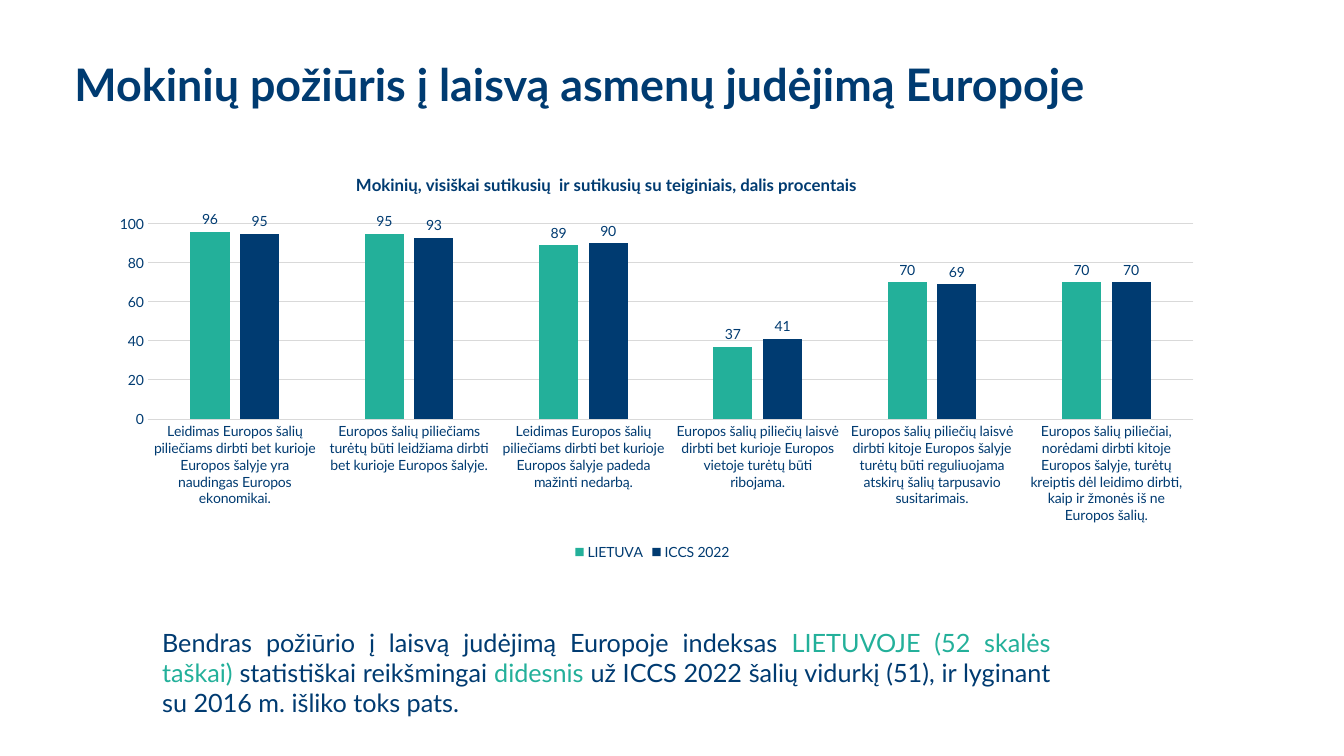
from lxml import etree
from pptx import Presentation
from pptx import util as u
from pptx.chart.data import CategoryChartData
from pptx.dml.color import RGBColor
from pptx.enum import chart as ch, text
from pptx.oxml.ns import qn

COLOURS = {"navy": "003B71", "teal": "23B09A", "grid": "D9D9D9"}


def style(font, size, colour="navy", bold=False):
    font.name = "Lato"
    font.size = u.Pt(size)
    font.bold = bold
    font.color.rgb = RGBColor.from_string(COLOURS[colour])


def place(part, index, **fractions):
    layout = part.find(qn("c:layout"))
    if layout is None:
        layout = etree.Element(qn("c:layout"))
        part.insert(index, layout)
    manual = etree.SubElement(layout, qn("c:manualLayout"))
    for tag, value in fractions.items():
        etree.SubElement(manual, qn(f"c:{tag}")).set("val", str(value))


prs = Presentation()
prs.slide_width = u.Inches(13.33)
prs.slide_height = u.Inches(7.5)
slide = prs.slides.add_slide(prs.slide_layouts[6])

heading = slide.shapes.add_textbox(
    u.Inches(0.64), u.Inches(0.57), u.Inches(12.04), u.Inches(0.58)).text_frame
heading.word_wrap = True
heading.vertical_anchor = text.MSO_ANCHOR.MIDDLE
heading.paragraphs[0].line_spacing = 0.9
heading_run = heading.paragraphs[0].add_run()
heading_run.text = "Mokinių požiūris į laisvą asmenų judėjimą Europoje"
style(heading_run.font, 32, bold=True)

summary = slide.shapes.add_textbox(
    u.Inches(1.51), u.Inches(6.17), u.Inches(9.01), u.Inches(1.01)).text_frame
summary.word_wrap = True
summary.paragraphs[0].alignment = text.PP_ALIGN.JUSTIFY
for words, colour in [
    ("Bendras požiūrio į laisvą judėjimą Europoje indeksas ", "navy"),
    ("LIETUVOJE (52 skalės taškai) ", "teal"),
    ("statistiškai reikšmingai ", "navy"),
    ("didesnis ", "teal"),
    ("už ICCS 2022 šalių vidurkį (51), ir lyginant su 2016 m. išliko toks pats.", "navy"),
]:
    run = summary.paragraphs[0].add_run()
    run.text = words
    style(run.font, 18, colour)

answers = CategoryChartData()
answers.categories = [
    "Leidimas Europos šalių piliečiams dirbti bet kurioje Europos šalyje yra naudingas Europos ekonomikai.",
    "Europos šalių piliečiams turėtų būti leidžiama dirbti bet kurioje Europos šalyje.",
    "Leidimas Europos šalių piliečiams dirbti bet kurioje Europos šalyje padeda mažinti nedarbą.",
    "Europos šalių piliečių laisvė dirbti bet kurioje Europos vietoje turėtų būti ribojama.",
    "Europos šalių piliečių laisvė dirbti kitoje Europos šalyje turėtų būti reguliuojama atskirų šalių tarpusavio susitarimais.",
    "Europos šalių piliečiai, norėdami dirbti kitoje Europos šalyje, turėtų kreiptis dėl leidimo dirbti, kaip ir žmonės iš ne Europos šalių.",
]
answers.add_series("LIETUVA", [96, 95, 89, 37, 70, 70])
answers.add_series("ICCS 2022", [95, 93, 90, 41, 69, 70])
chart = slide.shapes.add_chart(
    ch.XL_CHART_TYPE.COLUMN_CLUSTERED, u.Inches(0.97), u.Inches(1.64),
    u.Inches(11), u.Inches(3.96), answers).chart
style(chart.font, 10)

chart.has_title = True
caption = chart.chart_title.text_frame.paragraphs[0].add_run()
caption.text = "Mokinių, visiškai sutikusių  ir sutikusių su teiginiais, dalis procentais"
style(caption.font, 12, bold=True)
chart.chart_title.include_in_layout = False
place(chart.chart_title._element, 1, xMode="edge", yMode="edge", x=0.23, y=0.01)
place(chart._chartSpace.chart.plotArea, 0, layoutTarget="inner",
      xMode="edge", yMode="edge", x=0.045, y=0.147, w=0.943, h=0.489)

chart.has_legend = True
chart.legend.position = ch.XL_LEGEND_POSITION.BOTTOM
chart.legend.include_in_layout = False
style(chart.legend.font, 10)

statements, percent = chart.category_axis, chart.value_axis
for axis in (statements, percent):
    axis.major_tick_mark = axis.minor_tick_mark = ch.XL_TICK_MARK.NONE
    style(axis.tick_labels.font, 10)
percent.minimum_scale, percent.maximum_scale, percent.major_unit = 0, 100, 20
percent.has_major_gridlines = True
percent.format.line.fill.background()
for line in (statements.format.line, percent.major_gridlines.format.line):
    line.color.rgb = RGBColor.from_string(COLOURS["grid"])
    line.width = u.Pt(0.75)

columns = chart.plots[0]
columns.gap_width = 219
columns.overlap = -27
columns.vary_by_categories = False
for series, colour in zip(columns.series, ("teal", "navy")):
    series.format.fill.solid()
    series.format.fill.fore_color.rgb = RGBColor.from_string(COLOURS[colour])
    labels = series.data_labels
    labels.show_value = True
    labels.position = ch.XL_LABEL_POSITION.OUTSIDE_END
    style(labels.font, 10)

prs.save("out.pptx")
